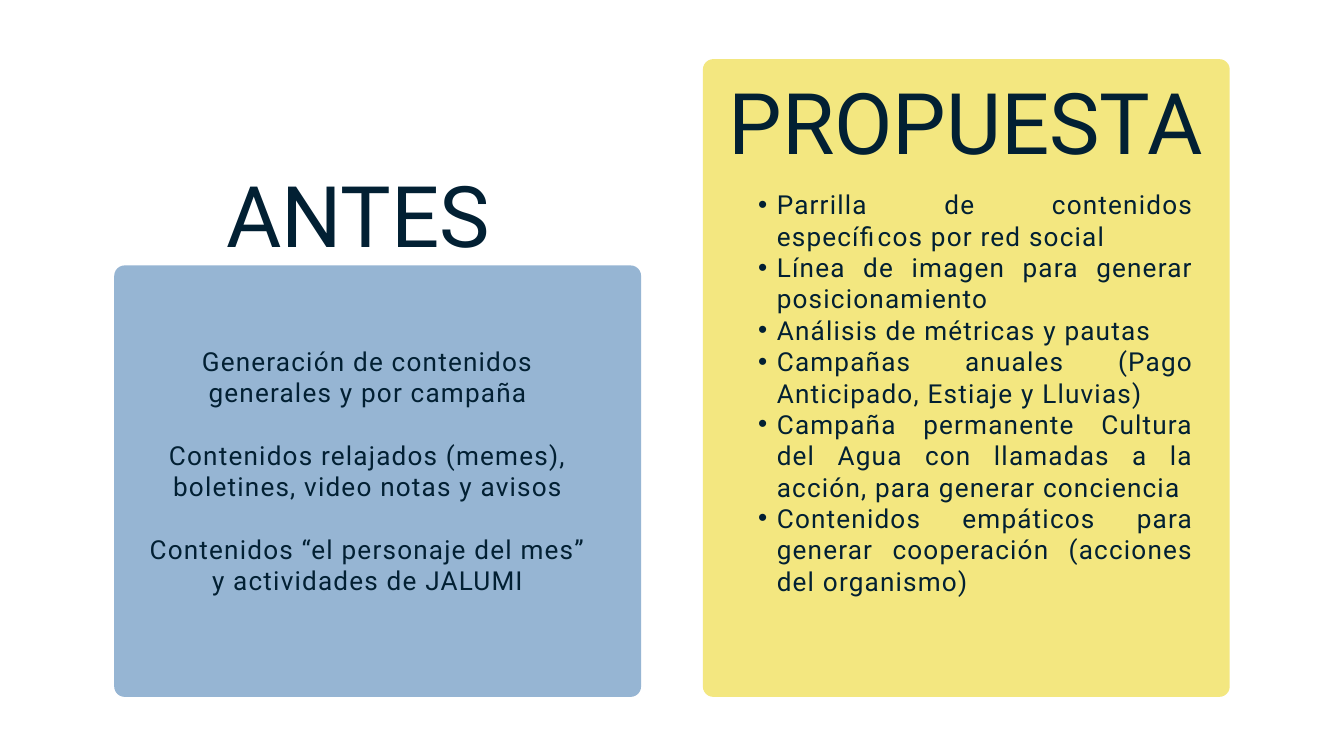
from lxml import etree
from pptx import Presentation
from pptx.dml.color import RGBColor
from pptx.enum.shapes import MSO_SHAPE
from pptx.enum.text import PP_ALIGN
from pptx.oxml.ns import qn
from pptx.util import Inches, Pt

ROUNDED = MSO_SHAPE.ROUNDED_RECTANGLE
CENTER, JUSTIFY = PP_ALIGN.CENTER, PP_ALIGN.JUSTIFY
NAVY, BLUE, YELLOW = "022033", "96B5D3", "F3E780"

# Two equal columns between the side margins, sharing one bottom edge
WIDTH, HEIGHT = 20, 11.25
MARGIN, COLUMN = 1.7, 7.84
LEFT_COLUMN, RIGHT_COLUMN = MARGIN, WIDTH - MARGIN - COLUMN
BOTTOM = 10.37
CORNER = 0.155
BODY_LINE = 33.6

presentation = Presentation()
presentation.slide_width = Inches(WIDTH)
presentation.slide_height = Inches(HEIGHT)
slide = presentation.slides.add_slide(presentation.slide_layouts[6])


def color(value):
    return RGBColor.from_string(value)


def add_text(lines, left, top, width, height, *, size=28, line=BODY_LINE,
             align=CENTER, gap=0, tracking=0, margin=0, hanging=0, bullet=None):
    box = slide.shapes.add_textbox(*map(Inches, (left, top, width, height)))
    frame = box.text_frame
    frame.word_wrap = True
    frame.margin_left = frame.margin_right = 0
    frame.margin_top = frame.margin_bottom = 0
    for index, text in enumerate(lines):
        paragraph = frame.add_paragraph() if index else frame.paragraphs[0]
        paragraph.alignment = align
        paragraph.line_spacing = Pt(line)
        paragraph.space_before = Pt(gap if index else 0)
        properties = paragraph._p.get_or_add_pPr()
        properties.set("marL", str(Inches(margin)))
        properties.set("indent", str(Inches(-hanging)))
        if bullet:
            etree.SubElement(properties, qn("a:buFont")).set("typeface", "Arial")
            etree.SubElement(properties, qn("a:buChar")).set("char", bullet)
        run = paragraph.add_run()
        run.text = text
        run.font.size = Pt(size)
        run.font.name = "Roboto"
        run.font.color.rgb = color(NAVY)
        run._r.get_or_add_rPr().set("spc", str(round(tracking * 100)))


# Panels
for left, top, fill in ((LEFT_COLUMN, 3.95, BLUE), (RIGHT_COLUMN, 0.88, YELLOW)):
    height = BOTTOM - top
    panel = slide.shapes.add_shape(
        ROUNDED, *map(Inches, (left, top, COLUMN, height)))
    panel.adjustments[0] = CORNER / min(COLUMN, height)
    panel.shadow.inherit = False
    panel.fill.solid()
    panel.fill.fore_color.rgb = color(fill)
    panel.line.fill.background()

# Headings
for heading, left, top, width in (("ANTES", 2.14, 2.77, 6.38),
                                  ("PROPUESTA", 10.68, 1.39, 7.38)):
    add_text([heading], left, top, width, 1.2, size=91, line=83.7)

# Current practice, one empty line's height between paragraphs
add_text([
    "Generación de contenidos generales y por campaña",
    "Contenidos relajados (memes), boletines, video notas y avisos",
    "Contenidos “el personaje del mes” y actividades de JALUMI",
], 1.84, 5.14, 6.98, 4.27, gap=BODY_LINE, tracking=1.3, margin=0.28)

# Proposal list
add_text([
    "Parrilla de contenidos específicos por red social",
    "Línea de imagen para generar posicionamiento",
    "Análisis de métricas y pautas",
    "Campañas anuales (Pago Anticipado, Estiaje y Lluvias)",
    "Campaña permanente Cultura del Agua con llamadas a la acción, "
    "para generar conciencia",
    "Contenidos empáticos para generar cooperación (acciones del organismo)",
], 10.99, 2.81, 6.77, 6.66, align=JUSTIFY, tracking=1.3,
    margin=0.57, hanging=0.28, bullet="•")

presentation.save("out.pptx")
